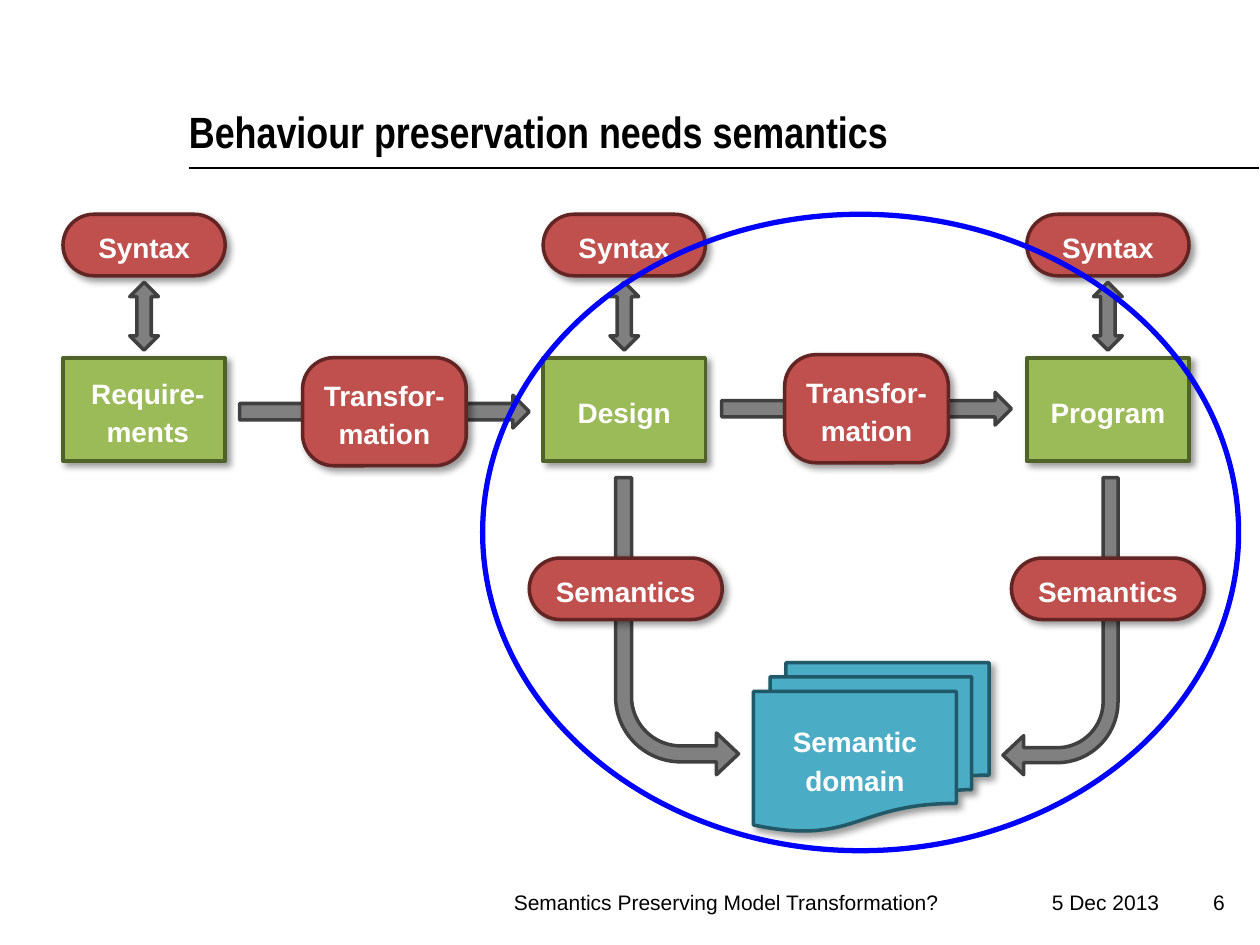
import pptx
import pptx.dml.color
import pptx.enum.shapes
import pptx.enum.text
import pptx.oxml
import pptx.oxml.ns
import pptx.util
from pptx.util import Cm

MSO = pptx.enum.shapes.MSO_SHAPE
ALIGN = pptx.enum.text.PP_ALIGN
ANCHOR = pptx.enum.text.MSO_ANCHOR
RED, GREEN, TEAL, GREY = (
    ("C0504D", "632523"), ("9BBB59", "4F6228"), ("4BACC6", "215968"), ("808080", "404040"))
NO_EFFECT = "<a:effectLst %s/>" % pptx.oxml.ns.nsdecls("a")
SHADOW = (
    '<a:effectLst %s><a:outerShdw blurRad="50800" dist="38100" dir="2700000" algn="tl" '
    'rotWithShape="0"><a:srgbClr val="000000"><a:alpha val="40000"/></a:srgbClr>'
    '</a:outerShdw></a:effectLst>' % pptx.oxml.ns.nsdecls("a"))


def rgb(value):
    """Return the colour for a hex string."""
    return pptx.dml.color.RGBColor.from_string(value)


def write(tf, text, size, color, font="Arial", bold=False, align=ALIGN.LEFT,
          anchor=ANCHOR.TOP, insets=(0.25, 0.13, 0.25, 0.13)):
    """Put one formatted paragraph into a text frame."""
    tf.word_wrap = True
    tf.vertical_anchor = anchor
    tf.margin_left, tf.margin_top, tf.margin_right, tf.margin_bottom = map(Cm, insets)
    tf.text = text
    p = tf.paragraphs[0]
    p.alignment = align
    for r in p.runs:
        r.font.name, r.font.size, r.font.bold = font, pptx.util.Pt(size), bold
        r.font.color.rgb = rgb(color)
    return p


def add_shape(slide, kind, box, colors, adjustments=()):
    """Add a flat preset shape with a fill and an outline."""
    s = slide.shapes.add_shape(kind, *map(Cm, box))
    s.shadow.inherit = False
    s.fill.solid()
    s.fill.fore_color.rgb = rgb(colors[0])
    s.line.color.rgb = rgb(colors[1])
    s.line.width = pptx.util.Pt(2)
    for i, value in enumerate(adjustments):
        s.adjustments[i] = value
    return s


def add_node(slide, kind, box, colors, text, adjustments=(), insets=(0.1, 0, 0.1, 0)):
    """Add a shadowed shape with a bold white label."""
    s = add_shape(slide, kind, box, colors, adjustments)
    sp_pr = s._element.spPr
    sp_pr.replace(sp_pr.find(pptx.oxml.ns.qn("a:effectLst")), pptx.oxml.parse_xml(SHADOW))
    p = write(s.text_frame, text, 16, "FFFFFF", bold=True, align=ALIGN.CENTER,
              anchor=ANCHOR.MIDDLE, insets=insets)
    p.line_spacing = 1.15
    p.space_after = pptx.util.Pt(10)


def add_transformation(slide, x, y, w, h, text):
    """Draw a straight arrow with a transformation node at its middle."""
    arrow_h, node_w = 0.66, 3.3
    add_shape(slide, MSO.RIGHT_ARROW, (x, y + (h - arrow_h) / 2, w, arrow_h), GREY)
    add_node(slide, MSO.ROUNDED_RECTANGLE, (x + (w - node_w) / 2, y, node_w, h),
             RED, text, [0.29])


def add_stage(slide, x, y, w, h, text, left=0.1):
    """Draw a development stage with its syntax above it."""
    add_node(slide, MSO.ROUNDED_RECTANGLE, (x, y, w, 1.24), RED, "Syntax", [0.5])
    add_shape(slide, MSO.UP_DOWN_ARROW, (x + (w - 0.58) / 2, y + 1.37, 0.58, 1.37), GREY)
    add_node(slide, MSO.RECTANGLE, (x, y + 2.9, w, h - 2.9), GREEN, text,
             insets=(left, 0.13, 0.1, 0.13))


def add_semantics(slide, x, y, w, h, mirrored):
    """Draw a bent arrow leading down to the domain with its label."""
    offset, label_w = 1.74, 3.89
    arrow_x, label_x = (x, x + w - label_w) if mirrored else (x + offset, x)
    s = add_shape(slide, MSO.BENT_ARROW, (arrow_x, y, w - offset, h), GREY,
                  [0.13, 0.17, 0.18, 0.53])
    xfrm = s._element.spPr.xfrm
    xfrm.set("flipV", "1")
    if mirrored:
        xfrm.set("flipH", "1")
    add_node(slide, MSO.ROUNDED_RECTANGLE, (label_x, y + 1.62, label_w, 1.24),
             RED, "Semantics", [0.5])


def add_heading(slide, x, y, w, h):
    """Draw the title and the rule beneath it."""
    tb = slide.shapes.add_textbox(*map(Cm, (x, y, w, h)))
    write(tb.text_frame, "Behaviour preservation needs semantics", 25, "000000",
          "Arial Narrow", True, anchor=ANCHOR.BOTTOM, insets=(0, 0.13, 0.25, 0))
    rule_y = y + h + 0.2
    line = slide.shapes.add_connector(
        pptx.enum.shapes.MSO_CONNECTOR.STRAIGHT, Cm(x), Cm(rule_y), Cm(25.38), Cm(rule_y))
    line.line.color.rgb = rgb("000000")
    line.line.width = pptx.util.Pt(1)
    line._element.spPr.append(pptx.oxml.parse_xml(NO_EFFECT))


def add_footer(slide, x, y, h):
    """Draw the talk name, date and slide number."""
    for dx, w, text, align, right in (
            (0, 9.37, "Semantics Preserving Model Transformation?", ALIGN.LEFT, 0.25),
            (9.78, 3.73, "5 Dec 2013", ALIGN.RIGHT, 0.25),
            (13.54, 1.04, "6", ALIGN.RIGHT, 0)):
        tb = slide.shapes.add_textbox(*map(Cm, (x + dx, y, w, h)))
        p = write(tb.text_frame, text, 12, "000000", align=align,
                  insets=(0.25, 0.13, right, 0.13))
        p.line_spacing = pptx.util.Pt(15)


def add_focus(slide, x, y, w, h):
    """Draw the ellipse that highlights the semantic part."""
    s = add_shape(slide, MSO.OVAL, (x, y, w, h), ("FFFFFF", "0000FF"))
    s.fill.background()
    s.line.width = pptx.util.Pt(3)


def main():
    """Build and save the slide."""
    prs = pptx.Presentation()
    prs.slide_width, prs.slide_height = Cm(25.4), Cm(19.05)
    slide = prs.slides.add_slide(prs.slide_layouts[6])
    add_heading(slide, 3.81, 0.58, 20.83, 2.6)
    add_transformation(slide, 4.83, 7.21, 5.84, 2.18, "Transfor-mation")
    add_transformation(slide, 14.55, 7.15, 5.84, 2.18, "Transfor-\vmation")
    add_semantics(slide, 10.67, 9.63, 4.22, 5.99, False)
    add_semantics(slide, 20.22, 9.63, 4.06, 5.99, True)
    add_stage(slide, 1.27, 4.32, 3.27, 4.98, "Require-ments", 0.25)
    add_stage(slide, 10.95, 4.32, 3.27, 4.98, "Design")
    add_stage(slide, 20.7, 4.32, 3.27, 4.98, "Program")
    add_node(slide, MSO.FLOWCHART_MULTIDOCUMENT, (15.19, 13.36, 4.75, 3.4), TEAL,
             "Semantic\vdomain", insets=(0.25, 0.13, 0.25, 0.13))
    add_footer(slide, 10.11, 17.78, 1.32)
    add_focus(slide, 9.73, 4.32, 15.24, 12.83)
    prs.save("out.pptx")


if __name__ == "__main__":
    main()
